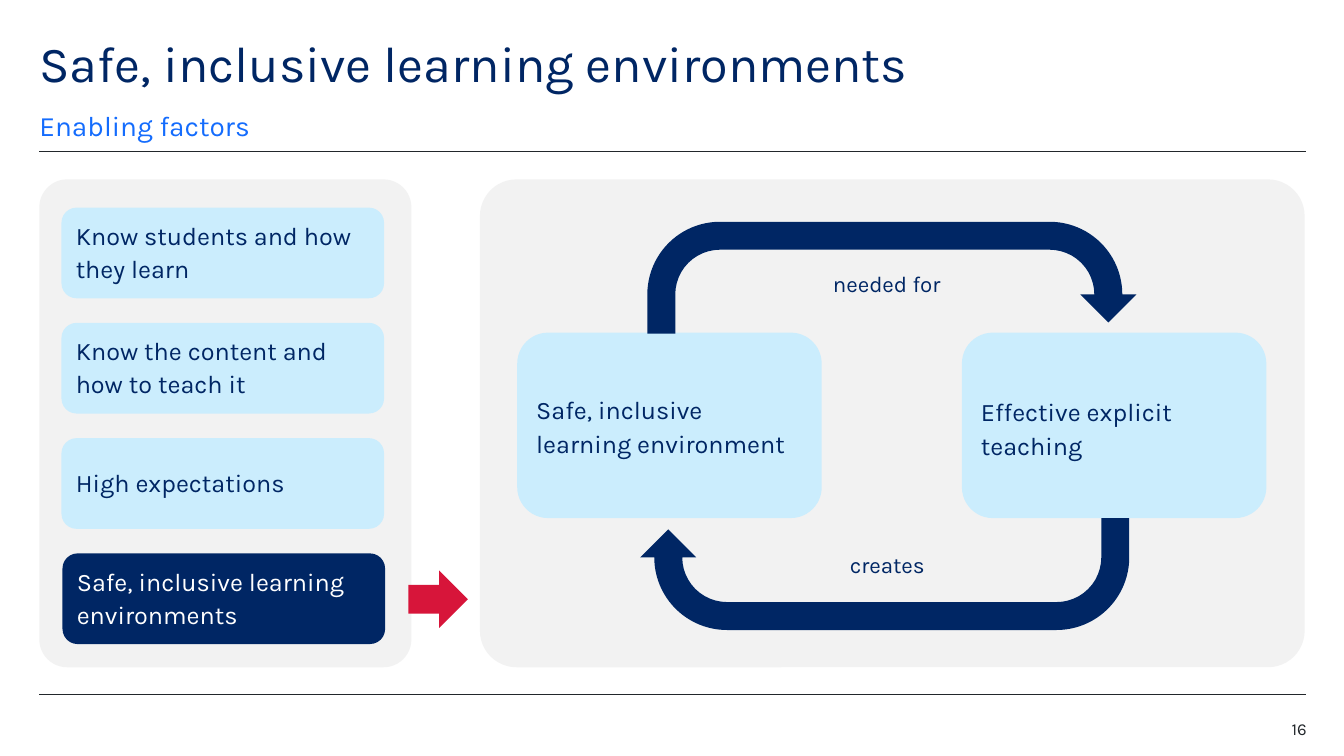
import pptx
import pptx.dml.color
import pptx.enum.shapes
import pptx.enum.text
import pptx.oxml
import pptx.util
from dataclasses import dataclass

Inches = pptx.util.Inches
Pt = pptx.util.Pt
Shape = pptx.enum.shapes.MSO_SHAPE
Align = pptx.enum.text.PP_ALIGN
Anchor = pptx.enum.text.MSO_ANCHOR


@dataclass(frozen=True)
class Theme:
    font: str = "Karla"
    navy: str = "002664"
    blue: str = "146CFD"
    sky: str = "CBEDFD"
    red: str = "D7153A"
    panel: str = "F2F2F2"
    ink: str = "22272B"
    white: str = "FFFFFF"
    title_size: int = 36
    subtitle_size: int = 20
    card_size: int = 18
    label_size: int = 16
    number_size: int = 12


def rgb(color):
    return pptx.dml.color.RGBColor.from_string(color)


def apply(target, values):
    for name, value in values.items():
        setattr(target, name, value)


class SlideBuilder:
    def __init__(self, slide, theme):
        self.slide = slide
        self.theme = theme

    def set_words(self, frame, words, size, color, insets, anchor, paragraph_format):
        left, top, right, bottom = map(Inches, insets)
        apply(frame, {"word_wrap": True, "vertical_anchor": anchor,
                      "margin_left": left, "margin_top": top,
                      "margin_right": right, "margin_bottom": bottom})
        paragraph = frame.paragraphs[0]
        apply(paragraph, {"alignment": Align.LEFT, **paragraph_format})
        run = paragraph.add_run()
        run.text = words
        apply(run.font, {"name": self.theme.font, "size": Pt(size)})
        run.font.color.rgb = rgb(color)

    def text(self, box, words, size, color, insets=(0, 0, 0, 0),
             anchor=Anchor.TOP, **paragraph_format):
        textbox = self.slide.shapes.add_textbox(*map(Inches, box))
        self.set_words(textbox.text_frame, words, size, color, insets, anchor,
                       paragraph_format)

    def shape(self, kind, box, fill, adjustments=(), rotation=0):
        shape = self.slide.shapes.add_shape(kind, *map(Inches, box))
        shape.shadow.inherit = False
        shape.fill.solid()
        shape.fill.fore_color.rgb = rgb(fill)
        shape.line.fill.background()
        shape.rotation = rotation
        for index, value in enumerate(adjustments):
            shape.adjustments[index] = value
        return shape

    def panel(self, box):
        self.shape(Shape.ROUNDED_RECTANGLE, box, self.theme.panel, [0.075])

    def card(self, box, words, fill, color, top_inset=0):
        card = self.shape(Shape.ROUNDED_RECTANGLE, box, fill)
        self.set_words(card.text_frame, words, self.theme.card_size, color,
                       (0.1, top_inset, 0.1, 0.05), Anchor.MIDDLE, {"line_spacing": 1.1})

    def rule(self, y):
        rule = self.slide.shapes.add_connector(
            pptx.enum.shapes.MSO_CONNECTOR.STRAIGHT,
            Inches(0.39), Inches(y), Inches(12.95), Inches(y))
        rule.line.color.rgb = rgb(self.theme.ink)
        rule.line.width = Pt(0.5)
        rule.element.spPr.append(pptx.oxml.parse_xml(
            '<a:effectLst xmlns:a="http://schemas.openxmlformats.org/drawingml/2006/main"/>'))


def main():
    presentation = pptx.Presentation()
    apply(presentation, {"slide_width": Inches(13.33), "slide_height": Inches(7.5)})
    theme = Theme()
    builder = SlideBuilder(presentation.slides.add_slide(presentation.slide_layouts[6]), theme)

    # Heading and rules
    for y in (1.5, 6.89):
        builder.rule(y)
    builder.text((0.39, 0.39, 11.02, 0.6), "Safe, inclusive learning environments",
                 theme.title_size, theme.navy, line_spacing=0.9)
    builder.text((0.39, 1.07, 11.02, 0.34), "Enabling factors", theme.subtitle_size,
                 theme.blue, anchor=Anchor.BOTTOM, line_spacing=1.5, space_after=Pt(12))

    # Enabling factors, the last one highlighted
    builder.panel((0.39, 1.78, 3.69, 4.84))
    factors = [
        ("Know students and how they learn", 0.61, theme.sky, theme.navy),
        ("Know the content and how to teach it", 0.61, theme.sky, theme.navy),
        ("High expectations", 0.61, theme.sky, theme.navy),
        ("Safe, inclusive learning environments", 0.62, theme.navy, theme.white),
    ]
    first_top, last_top = 2.06, 5.49
    pitch = (last_top - first_top) / (len(factors) - 1)
    for row, (factor, left, fill, color) in enumerate(factors):
        builder.card((left, first_top + pitch * row, 3.2, 0.9), factor, fill, color)
    builder.shape(Shape.RIGHT_ARROW, (4.05, 5.66, 0.59, 0.57), theme.red)

    # Cycle of environment and teaching
    builder.panel((4.76, 1.78, 8.18, 4.84))
    for left, words, top_inset in ((5.13, "Safe, inclusive learning environment", 0.04),
                                   (9.54, "Effective explicit teaching", 0.08)):
        builder.card((left, 3.3, 3.02, 1.84), words, theme.sky, theme.navy, top_inset)
    for left, top, rotation in ((6.42, 2.2, 0), (6.35, 5.14, 180)):
        builder.shape(Shape.U_TURN_ARROW, (left, top, 4.85, 1.11), theme.navy,
                      [0.25, 0.25, 0.25, 0.65, 0.9], rotation)
    for box, label in (((8.13, 2.63, 1.33, 0.37), "needed for"),
                       ((8.21, 5.42, 1.18, 0.37), "creates")):
        builder.text(box, label, theme.label_size, theme.navy,
                     (0.1, 0.05, 0.1, 0.05), alignment=Align.CENTER)

    # Page number
    builder.text((12.17, 7.13, 0.79, 0.2), "16", theme.number_size, theme.ink,
                 alignment=Align.RIGHT)

    presentation.save("out.pptx")


if __name__ == "__main__":
    main()
